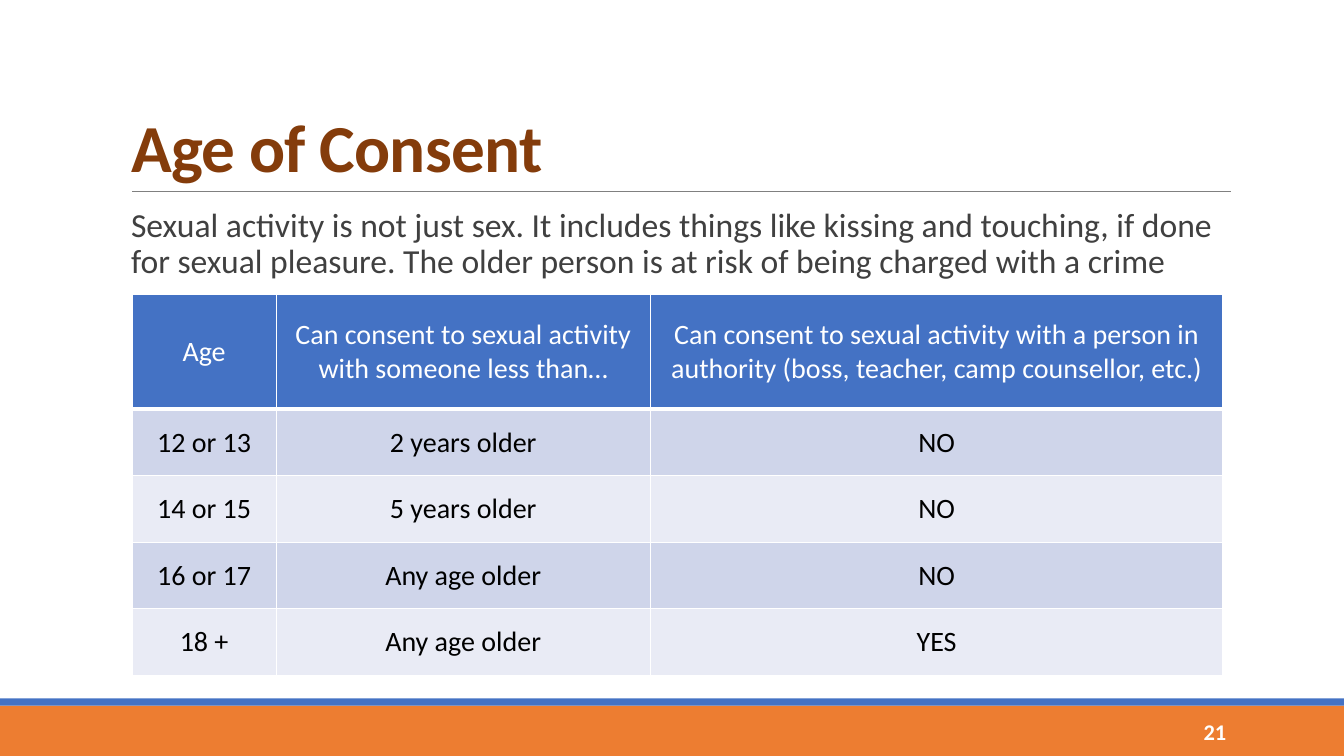
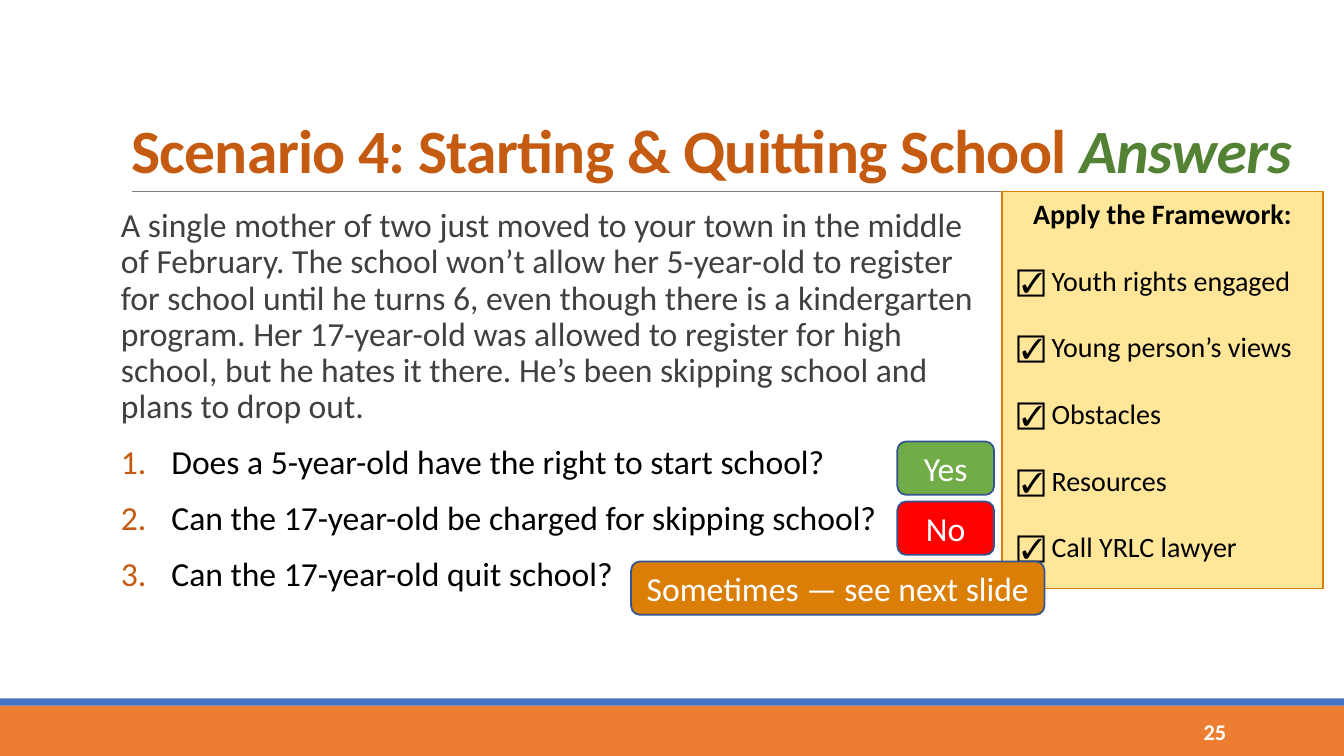
"""Build two slides on the age of consent and a school scenario."""
from dataclasses import dataclass

from lxml.etree import SubElement
from pptx import Presentation
from pptx.dml.color import RGBColor
from pptx.enum.shapes import MSO_CONNECTOR as Connector, MSO_SHAPE as Preset
from pptx.enum.text import MSO_ANCHOR as Anchor, MSO_AUTO_SIZE as AutoSize, PP_ALIGN as Align
from pptx.oxml.ns import qn
from pptx.util import Inches, Pt


@dataclass(frozen=True)
class Theme:
    font: str = "Calibri"
    orange: str = "ED7D31"
    blue: str = "4472C4"
    rule: str = "808080"
    brown: str = "843C0B"
    rust: str = "C55A11"
    dark_green: str = "548235"
    gray: str = "404040"
    black: str = "000000"
    white: str = "FFFFFF"
    row_dark: str = "CFD5EA"
    row_light: str = "E9EBF5"
    cream: str = "FFE699"
    amber: str = "DB7E06"
    green: str = "70AD47"
    red: str = "FF0000"
    outline: str = "325491"
    long_title_size: int = 44
    title_size: int = 48
    body_size: int = 24
    detail_size: int = 20
    number_size: int = 16


theme = Theme()


def add_run(paragraph, text, size, color, bold=False, italic=False):
    run = paragraph.add_run()
    run.text = text
    run.font.name = theme.font
    run.font.size = Pt(size)
    run.font.bold = bold
    run.font.italic = italic
    run.font.color.rgb = RGBColor.from_string(color)
    return run


def add_block(slide, preset, box, fill, outline=None):
    shape = slide.shapes.add_shape(preset, *map(Inches, box))
    shape.shadow.inherit = False
    shape.fill.solid()
    shape.fill.fore_color.rgb = RGBColor.from_string(fill)
    if outline:
        shape.line.color.rgb = RGBColor.from_string(outline)
        shape.line.width = Pt(1.25)
    else:
        shape.line.fill.background()
    return shape


presentation = Presentation()
presentation.slide_width = Inches(13.33)
presentation.slide_height = Inches(7.5)
layout = presentation.slide_layouts[5]

pages = [
    {
        "title": [("Age of Consent", theme.brown, False)],
        "title_size": theme.title_size,
        "title_width": 11,
        "body_box": (1.3, 2.02, 10.9, 0.85),
        "intro": "Sexual activity is not just sex. It includes things like kissing and touching, "
                 "if done for sexual pleasure. The older person is at risk of being charged with a crime",
        "questions": [],
        "number": "21",
    },
    {
        "title": [
            ("Scenario 4: Starting & Quitting School ", theme.rust, False),
            ("Answers", theme.dark_green, True),
        ],
        "title_size": theme.long_title_size,
        "title_width": 11.92,
        "body_box": (1.2, 2.02, 8.56, 4.4),
        "intro": "A single mother of two just moved to your town in the middle of February. "
                 "The school won’t allow her 5-year-old to register for school until he turns 6, "
                 "even though there is a kindergarten program. Her 17-year-old was allowed to "
                 "register for high school, but he hates it there. He’s been skipping school "
                 "and plans to drop out.",
        "questions": [
            "Does a 5-year-old have the right to start school?",
            "Can the 17-year-old be charged for skipping school?",
            "Can the 17-year-old quit school?",
        ],
        "number": "25",
    },
]

slides = []
for page in pages:
    slide = presentation.slides.add_slide(layout)
    slides.append(slide)

    title = slide.shapes.title
    title.left, title.top = Inches(1.2), Inches(0.31)
    title.width, title.height = Inches(page["title_width"]), Inches(1.59)
    title.text_frame.vertical_anchor = Anchor.BOTTOM
    title.text_frame.auto_size = AutoSize.NONE
    paragraph = title.text_frame.paragraphs[0]
    paragraph.alignment = Align.LEFT
    paragraph.line_spacing = 0.85
    for text, color, italic in page["title"]:
        run = add_run(paragraph, text, page["title_size"], color, True, italic)
        run._r.get_or_add_rPr().set("spc", "-50")

    body = slide.shapes.add_textbox(*map(Inches, page["body_box"])).text_frame
    body.word_wrap = True
    body.margin_left = body.margin_right = 0
    paragraph = body.paragraphs[0]
    add_run(paragraph, page["intro"], theme.body_size, theme.gray)
    for question in page["questions"]:
        paragraph = body.add_paragraph()
        add_run(paragraph, question, theme.body_size, theme.black)
        properties = paragraph._p.get_or_add_pPr()
        properties.set("marL", str(Inches(0.5)))
        properties.set("indent", str(Inches(-0.5)))
        bullet_color = SubElement(properties, qn("a:buClr"))
        SubElement(bullet_color, qn("a:srgbClr"), val=theme.rust)
        SubElement(properties, qn("a:buFont"), typeface="+mj-lt")
        SubElement(properties, qn("a:buAutoNum"), type="arabicPeriod")
    for paragraph in body.paragraphs:
        paragraph.line_spacing = 0.9
        paragraph.space_before = Pt(12)
        paragraph.space_after = Pt(2)

    number = slide.shapes.add_textbox(
        Inches(10.83), Inches(7.06), Inches(1.43), Inches(0.4)
    ).text_frame
    number.word_wrap = True
    number.vertical_anchor = Anchor.MIDDLE
    number.paragraphs[0].alignment = Align.RIGHT
    add_run(number.paragraphs[0], page["number"], theme.number_size, theme.white, True)

consent_slide, scenario_slide = slides

footer_band = add_block(consent_slide, Preset.RECTANGLE, (0, 7, 13.33, 0.5), theme.orange)
accent_band = add_block(consent_slide, Preset.RECTANGLE, (0, 6.93, 13.33, 0.07), theme.blue)
title_rule = consent_slide.shapes.add_connector(
    Connector.STRAIGHT, Inches(1.31), Inches(1.9), Inches(12.21), Inches(1.9)
)
title_rule.line.color.rgb = RGBColor.from_string(theme.rule)
title_rule.line.width = Pt(0.5)
SubElement(title_rule.element.spPr, qn("a:effectLst"))
for shape_id, shape in enumerate((footer_band, accent_band, title_rule), 101):
    shape.element.xpath(".//p:cNvPr")[0].set("id", str(shape_id))
    layout.shapes.element.append(shape.element)

consent_rows = [
    (
        "Age",
        "Can consent to sexual activity with someone less than…",
        "Can consent to sexual activity with a person in authority (boss, teacher, camp counsellor, etc.)",
    ),
    ("12 or 13", "2 years older", "NO"),
    ("14 or 15", "5 years older", "NO"),
    ("16 or 17", "Any age older", "NO"),
    ("18 +", "Any age older", "YES"),
]
column_widths = (1.43, 3.71, 5.68)
row_heights = (1.14, 0.66, 0.66, 0.66, 0.66)
table = consent_slide.shapes.add_table(
    len(row_heights), len(column_widths), Inches(1.31), Inches(2.92),
    Inches(sum(column_widths)), Inches(sum(row_heights)),
).table
for column, width in zip(table.columns, column_widths):
    column.width = Inches(width)
for row_index, (height, texts) in enumerate(zip(row_heights, consent_rows)):
    table.rows[row_index].height = Inches(height)
    if row_index == 0:
        fill, color = theme.blue, theme.white
    else:
        fill = theme.row_dark if row_index % 2 else theme.row_light
        color = theme.black
    border_widths = {
        "a:lnL": 1,
        "a:lnR": 1,
        "a:lnT": 3 if row_index == 1 else 1,
        "a:lnB": 3 if row_index == 0 else 1,
    }
    for column_index, text in enumerate(texts):
        cell = table.cell(row_index, column_index)
        cell.vertical_anchor = Anchor.MIDDLE
        cell_properties = cell._tc.get_or_add_tcPr()
        for side, width in border_widths.items():
            border = SubElement(cell_properties, qn(side), w=str(Pt(width)))
            border_fill = SubElement(border, qn("a:solidFill"))
            SubElement(border_fill, qn("a:srgbClr"), val=theme.white)
        cell.fill.solid()
        cell.fill.fore_color.rgb = RGBColor.from_string(fill)
        paragraph = cell.text_frame.paragraphs[0]
        paragraph.alignment = Align.CENTER
        add_run(paragraph, text, theme.detail_size, color)

framework = add_block(
    scenario_slide, Preset.RECTANGLE, (9.94, 1.9, 3.18, 3.94), theme.cream, theme.amber
).text_frame
framework.word_wrap = True
framework.vertical_anchor = Anchor.TOP
paragraph = framework.paragraphs[0]
paragraph.alignment = Align.CENTER
add_run(paragraph, "Apply the Framework:", theme.detail_size, theme.black, True)
for step in (
    "Youth rights engaged",
    "Young person’s views",
    "Obstacles",
    "Resources",
    "Call YRLC lawyer",
):
    paragraph = framework.add_paragraph()
    paragraph.alignment = Align.LEFT
    paragraph.space_before = Pt(23.6)
    paragraph._p.get_or_add_pPr().set("marL", str(Inches(0.05)))
    add_run(paragraph, f"☑ {step}", theme.detail_size, theme.black)

answers = [
    ("Yes", 8.9, 0.96, theme.green),
    ("No", 8.9, 0.96, theme.red),
    ("Sometimes — see next slide", 6.26, 4.1, theme.amber),
]
for index, (text, left, width, fill) in enumerate(answers):
    box = (left, 4.38 + index * 0.595, width, 0.53)
    answer = add_block(scenario_slide, Preset.ROUNDED_RECTANGLE, box, fill, theme.outline)
    answer.text_frame.word_wrap = True
    answer.text_frame.vertical_anchor = Anchor.MIDDLE
    paragraph = answer.text_frame.paragraphs[0]
    paragraph.alignment = Align.CENTER
    add_run(paragraph, text, theme.body_size, theme.white)

presentation.save("out.pptx")
